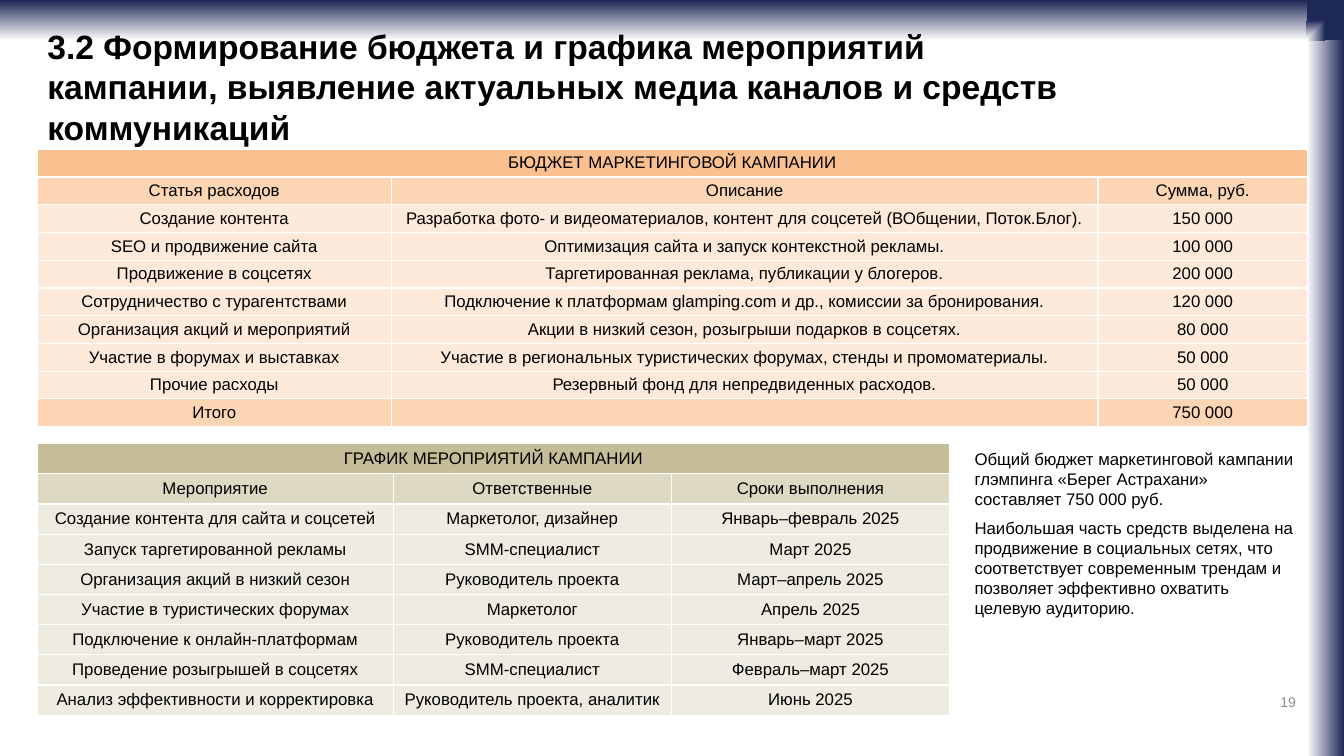
from lxml import etree
from pptx import Presentation
from pptx.dml.color import RGBColor
from pptx.enum.shapes import MSO_SHAPE
from pptx.enum.text import MSO_ANCHOR, MSO_AUTO_SIZE, PP_ALIGN
from pptx.oxml.ns import qn
from pptx.util import Cm, Pt

RECT = MSO_SHAPE.RECTANGLE
MIDDLE = MSO_ANCHOR.MIDDLE
GROW = MSO_AUTO_SIZE.SHAPE_TO_FIT_TEXT
LEFT, CENTER, RIGHT = PP_ALIGN.LEFT, PP_ALIGN.CENTER, PP_ALIGN.RIGHT

WIDTH, HEIGHT = 33.87, 19.05
EDGE, BAND = 32.93, 1.02
MARGIN, LOWER_TOP = 0.94, 11.18

BUDGET = [
    ("БЮДЖЕТ МАРКЕТИНГОВОЙ КАМПАНИИ",),
    ("Статья расходов", "Описание", "Сумма, руб."),
    ("Создание контента",
     "Разработка фото- и видеоматериалов, контент для соцсетей (ВОбщении, Поток.Блог).",
     "150 000"),
    ("SEO и продвижение сайта",
     "Оптимизация сайта и запуск контекстной рекламы.", "100 000"),
    ("Продвижение в соцсетях",
     "Таргетированная реклама, публикации у блогеров.", "200 000"),
    ("Сотрудничество с турагентствами",
     "Подключение к платформам glamping.com и др., комиссии за бронирования.",
     "120 000"),
    ("Организация акций и мероприятий",
     "Акции в низкий сезон, розыгрыши подарков в соцсетях.", "80 000"),
    ("Участие в форумах и выставках",
     "Участие в региональных туристических форумах, стенды и промоматериалы.",
     "50 000"),
    ("Прочие расходы", "Резервный фонд для непредвиденных расходов.", "50 000"),
    ("Итого", "", "750 000"),
]
SCHEDULE = [
    ("ГРАФИК МЕРОПРИЯТИЙ КАМПАНИИ",),
    ("Мероприятие", "Ответственные", "Сроки выполнения"),
    ("Создание контента для сайта и соцсетей", "Маркетолог, дизайнер",
     "Январь–февраль 2025"),
    ("Запуск таргетированной рекламы", "SMM-специалист", "Март 2025"),
    ("Организация акций в низкий сезон", "Руководитель проекта",
     "Март–апрель 2025"),
    ("Участие в туристических форумах", "Маркетолог", "Апрель 2025"),
    ("Подключение к онлайн-платформам", "Руководитель проекта",
     "Январь–март 2025"),
    ("Проведение розыгрышей в соцсетях", "SMM-специалист",
     "Февраль–март 2025"),
    ("Анализ эффективности и корректировка", "Руководитель проекта, аналитик",
     "Июнь 2025"),
]
TITLE = ("3.2 Формирование бюджета и графика мероприятий кампании, "
         "выявление актуальных медиа каналов и средств коммуникаций")
SUMMARY = [
    "Общий бюджет маркетинговой кампании глэмпинга «Берег Астрахани» "
    "составляет 750 000 руб.",
    "Наибольшая часть средств выделена на продвижение в социальных сетях, "
    "что соответствует современным трендам и позволяет эффективно охватить "
    "целевую аудиторию.",
]


def rgb(code):
    """Turn a hex string into a colour."""
    return RGBColor.from_string(code)


def write(p, text, size=12, color="000000", bold=False, align=LEFT, before=0):
    """Write formatted text into a paragraph."""
    p.alignment = align
    if before:
        p.space_before = Pt(before)
    if not text:
        etree.SubElement(p._p, qn("a:endParaRPr"), sz=str(size * 100))
        return
    r = p.add_run()
    r.text = text
    r.font.name, r.font.size, r.font.bold = "Arial", Pt(size), bold
    r.font.color.rgb = rgb(color)


def add_band(s, x, y, w, h, angle=0, corner=False):
    """Draw a rectangle fading from white to navy."""
    sp = s.shapes.add_shape(RECT, Cm(x), Cm(y), Cm(w), Cm(h))
    sp.shadow.inherit = False
    sp.line.fill.background()
    sp.fill.gradient()
    sp.fill.gradient_angle = angle
    for stop, position, color in zip(sp.fill.gradient_stops, (0, 1),
                                     ("FFFFFF", "1E2856")):
        stop.position = position
        stop.color.rgb = rgb(color)
    if corner:
        lin = next(sp._element.iter(qn("a:lin")))
        radial = etree.Element(qn("a:path"), {"path": "rect"})
        etree.SubElement(radial, qn("a:fillToRect"), t="100000", r="100000")
        lin.getparent().replace(lin, radial)


def add_text(s, x, y, w, h, texts, anchor=None, **style):
    """Add a wrapping text box with one paragraph per text."""
    tf = s.shapes.add_textbox(Cm(x), Cm(y), Cm(w), Cm(h)).text_frame
    tf.word_wrap, tf.auto_size = True, GROW
    if anchor is not None:
        tf.vertical_anchor = anchor
    for i, text in enumerate(texts):
        p = tf.add_paragraph() if i else tf.paragraphs[0]
        write(p, text, before=6 if i else 0, **style)


def set_title(s, x, y, w, h, text):
    """Place and fill the title placeholder in front of the bands."""
    sp = s.shapes.title
    sp._element.getparent().append(sp._element)
    sp.left, sp.top, sp.width, sp.height = Cm(x), Cm(y), Cm(w), Cm(h)
    tf = sp.text_frame
    tf.word_wrap, tf.auto_size, tf.vertical_anchor = True, GROW, MIDDLE
    write(tf.paragraphs[0], text, size=24, bold=True)


def style_cell(cell, fill, inset):
    """Give a cell its insets, white borders and fill."""
    cell.margin_left = cell.margin_right = Cm(inset)
    cell.margin_top = cell.margin_bottom = Cm(inset)
    cell.vertical_anchor = MIDDLE
    tc_pr = cell._tc.get_or_add_tcPr()
    for side in ("lnL", "lnR", "lnT", "lnB"):
        ln = etree.SubElement(tc_pr, qn("a:" + side), w=str(Pt(1)))
        solid = etree.SubElement(ln, qn("a:solidFill"))
        etree.SubElement(solid, qn("a:srgbClr"), val="FFFFFF")
    cell.fill.solid()
    cell.fill.fore_color.rgb = rgb(fill)


def add_grid(s, x, y, widths, row_height, rows, fills, inset=0, total=False):
    """Add a table with a merged heading row, column names and body rows."""
    heading, accent, body = fills
    table = s.shapes.add_table(len(rows), len(widths), Cm(x), Cm(y),
                               Cm(sum(widths)),
                               Cm(row_height * len(rows))).table
    for column, width in zip(table.columns, widths):
        column.width = Cm(width)
    colors = [heading, accent] + [body] * (len(rows) - 2)
    if total:
        colors[-1] = accent
    for i, (row, color) in enumerate(zip(rows, colors)):
        table.rows[i].height = Cm(row_height)
        for cell in table.rows[i].cells:
            style_cell(cell, color, inset)
        for j, text in enumerate(row):
            write(table.cell(i, j).text_frame.paragraphs[0], text, align=CENTER)
    table.cell(0, 0).merge(table.cell(0, len(widths) - 1))


def main():
    """Build the slide and save it."""
    prs = Presentation()
    prs.slide_width, prs.slide_height = Cm(WIDTH), Cm(HEIGHT)
    s = prs.slides.add_slide(prs.slide_layouts[5])
    add_band(s, EDGE, 0, WIDTH - EDGE, HEIGHT)
    add_band(s, 0, 0, WIDTH, BAND, angle=90)
    add_band(s, EDGE, 0, WIDTH - EDGE, BAND, corner=True)
    set_title(s, MARGIN, 1.02, 26.67, 2.31, TITLE)
    add_text(s, 30.73, 17.35, 2.18, 0.69, ["19"], anchor=MIDDLE, size=10,
             color="8C8C8C", align=RIGHT)
    add_grid(s, MARGIN, 3.76, (8.92, 17.81, 5.28), 0.7, BUDGET,
             ("FAC090", "FCD5B5", "FDEADA"), total=True)
    add_grid(s, MARGIN, LOWER_TOP, (8.97, 7.01, 7.01), 0.76, SCHEDULE,
             ("C4BD97", "DDD9C3", "EEECE1"), inset=0.12)
    add_text(s, 24.31, LOWER_TOP, 8.61, 4.57, SUMMARY)
    prs.save("out.pptx")


if __name__ == "__main__":
    main()
